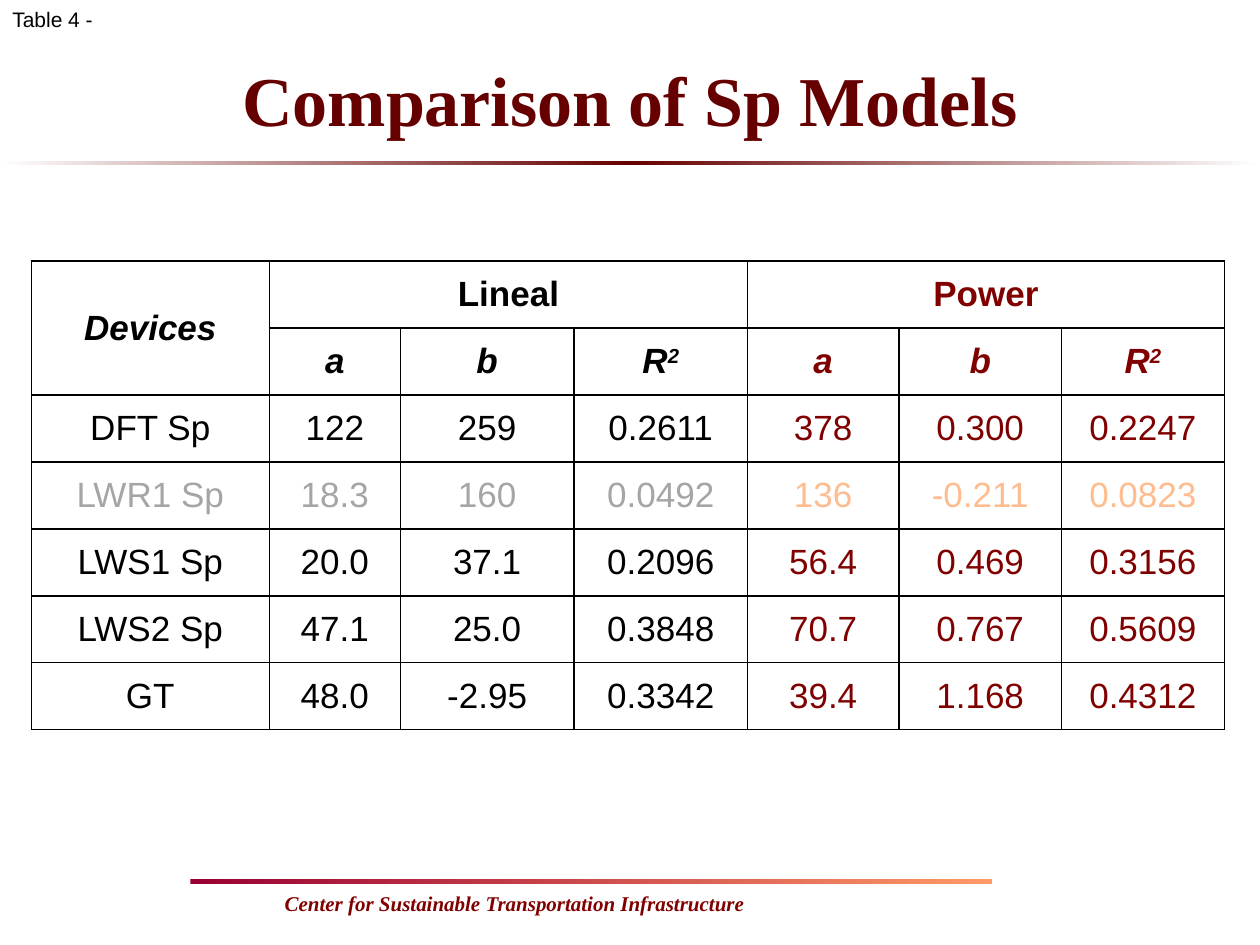
from copy import deepcopy
from lxml.etree import SubElement
from pptx import Presentation
from pptx.dml.color import RGBColor
from pptx.enum.shapes import MSO_SHAPE
from pptx.enum.text import MSO_ANCHOR, PP_ALIGN
from pptx.oxml.ns import qn
from pptx.util import Cm, Pt

BLACK = RGBColor(0, 0, 0)
WHITE = RGBColor(255, 255, 255)
DARK = RGBColor(0x66, 0, 0)
MAROON = RGBColor(0x80, 0, 0)
WINE = RGBColor(0x99, 0, 0x33)
ORANGE = RGBColor(0xFF, 0x99, 0x66)
GREY = RGBColor(0xA5, 0xA5, 0xA5)
PEACH = RGBColor(0xFF, 0xBC, 0x8F)
SERIF = "Times New Roman"
SANS = "Arial"
WIDTHS = [4.8, 2.64, 3.5, 3.5, 3.05, 3.28, 3.28]
HEIGHT = 1.35
POWER = 4
WEAK = 3
ROWS = [
    ["Devices", "Lineal", "", "", "Power", "", ""],
    ["", "a", "b", "R2", "a", "b", "R2"],
    ["DFT Sp", "122", "259", "0.2611", "378", "0.300", "0.2247"],
    ["LWR1 Sp", "18.3", "160", "0.0492", "136", "-0.211", "0.0823"],
    ["LWS1 Sp", "20.0", "37.1", "0.2096", "56.4", "0.469", "0.3156"],
    ["LWS2 Sp", "47.1", "25.0", "0.3848", "70.7", "0.767", "0.5609"],
    ["GT", "48.0", "-2.95", "0.3342", "39.4", "1.168", "0.4312"],
]


def add_run(para, text, size, face, color, bold=False, italic=False):
    run = para.add_run()
    run.text = text
    font = run.font
    font.size, font.name = Pt(size), face
    font.bold, font.italic = bold, italic
    font.color.rgb = color
    return run


def add_text(slide, box, text, size, face, color, bold=False, italic=False,
             align=PP_ALIGN.LEFT, anchor=MSO_ANCHOR.TOP, wrap=True):
    frame = slide.shapes.add_textbox(*map(Cm, box)).text_frame
    frame.word_wrap = wrap
    frame.vertical_anchor = anchor
    para = frame.paragraphs[0]
    para.alignment = align
    add_run(para, text, size, face, color, bold, italic)


def add_bar(slide, box, colors):
    bar = slide.shapes.add_shape(MSO_SHAPE.RECTANGLE, *map(Cm, box))
    bar.shadow.inherit = False
    bar.line.fill.background()
    bar.fill.gradient()
    bar.fill.gradient_angle = 0
    stops = bar._element.spPr.find(".//" + qn("a:gsLst"))
    for _ in colors[2:]:
        stops.append(deepcopy(stops[0]))
    for i, (stop, color) in enumerate(zip(bar.fill.gradient_stops, colors)):
        stop.position = i / (len(colors) - 1)
        stop.color.rgb = color


def set_border(cell):
    props = cell._tc.get_or_add_tcPr()
    for side in ("lnL", "lnR", "lnT", "lnB"):
        line = SubElement(props, qn("a:" + side), w=str(Pt(1)))
        fill = SubElement(line, qn("a:solidFill"))
        SubElement(fill, qn("a:srgbClr"), val=str(BLACK))


def fill_cell(cell, text, row, col):
    set_border(cell)
    cell.fill.background()
    cell.vertical_anchor = MSO_ANCHOR.MIDDLE
    cell.margin_left = cell.margin_right = Cm(0.18)
    cell.margin_top = cell.margin_bottom = 0
    if not text:
        return
    plain, power = (GREY, PEACH) if row == WEAK else (BLACK, MAROON)
    color = power if col >= POWER else plain
    head = row < 2
    style = (20, SANS, color, head, head and (row == 1 or col == 0))
    para = cell.text_frame.paragraphs[0]
    para.alignment = PP_ALIGN.CENTER
    if text == "R2":
        add_run(para, "R", *style)
        power = add_run(para, "2", *style)
        power._r.get_or_add_rPr().set("baseline", "30000")
    else:
        add_run(para, text, *style)


def add_grid(slide):
    count = len(ROWS)
    table = slide.shapes.add_table(
        count, len(WIDTHS), Cm(0.63), Cm(5.26),
        Cm(sum(WIDTHS)), Cm(HEIGHT * count)).table
    table.first_row = table.horz_banding = False
    for col, width in zip(table.columns, WIDTHS):
        col.width = Cm(width)
    for row in table.rows:
        row.height = Cm(HEIGHT)
    for r, row in enumerate(ROWS):
        for c, text in enumerate(row):
            fill_cell(table.cell(r, c), text, r, c)
    table.cell(0, 0).merge(table.cell(1, 0))
    for left in (1, POWER):
        table.cell(0, left).merge(table.cell(0, left + 2))


def main():
    deck = Presentation()
    deck.slide_width, deck.slide_height = Cm(25.4), Cm(19.05)
    slide = deck.slides.add_slide(deck.slide_layouts[6])
    add_bar(slide, (3.84, 17.73, 16.15, 0.1), [WINE, ORANGE])
    add_bar(slide, (0, 3.25, 25.4, 0.07), [WHITE, DARK, WHITE])
    add_text(slide, (1.27, 1, 22.86, 1.98), "Comparison of Sp Models", 40,
             SERIF, DARK, bold=True, align=PP_ALIGN.CENTER,
             anchor=MSO_ANCHOR.MIDDLE)
    add_grid(slide)
    add_text(slide, (5.49, 17.83, 10.8, 0.81),
             "Center for Sustainable Transportation Infrastructure", 12,
             SERIF, MAROON, bold=True, italic=True)
    add_text(slide, (0, 0, 2.16, 0.76), "Table 4 -", 12, SANS, BLACK,
             anchor=MSO_ANCHOR.MIDDLE, wrap=False)
    deck.save("out.pptx")


if __name__ == "__main__":
    main()
